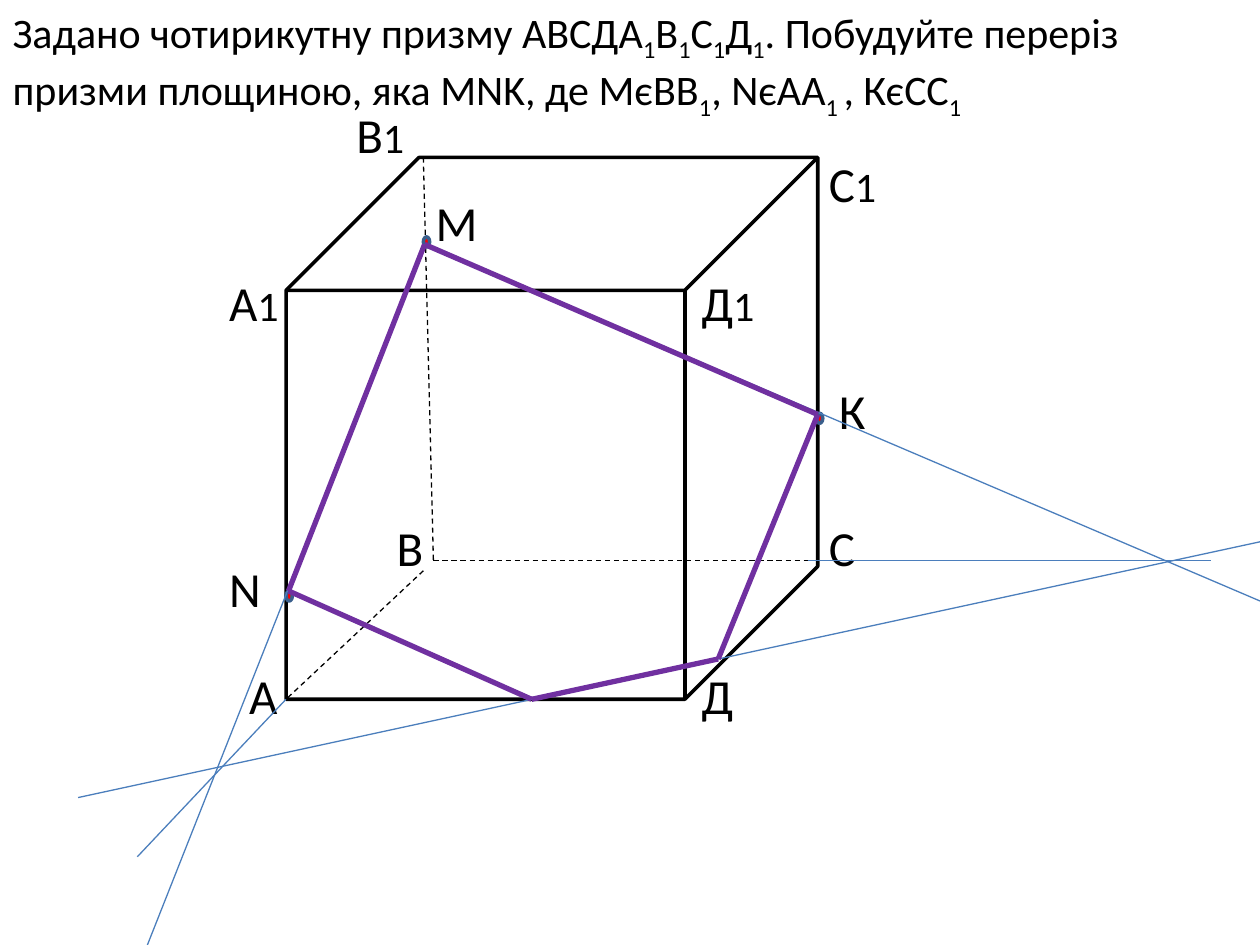
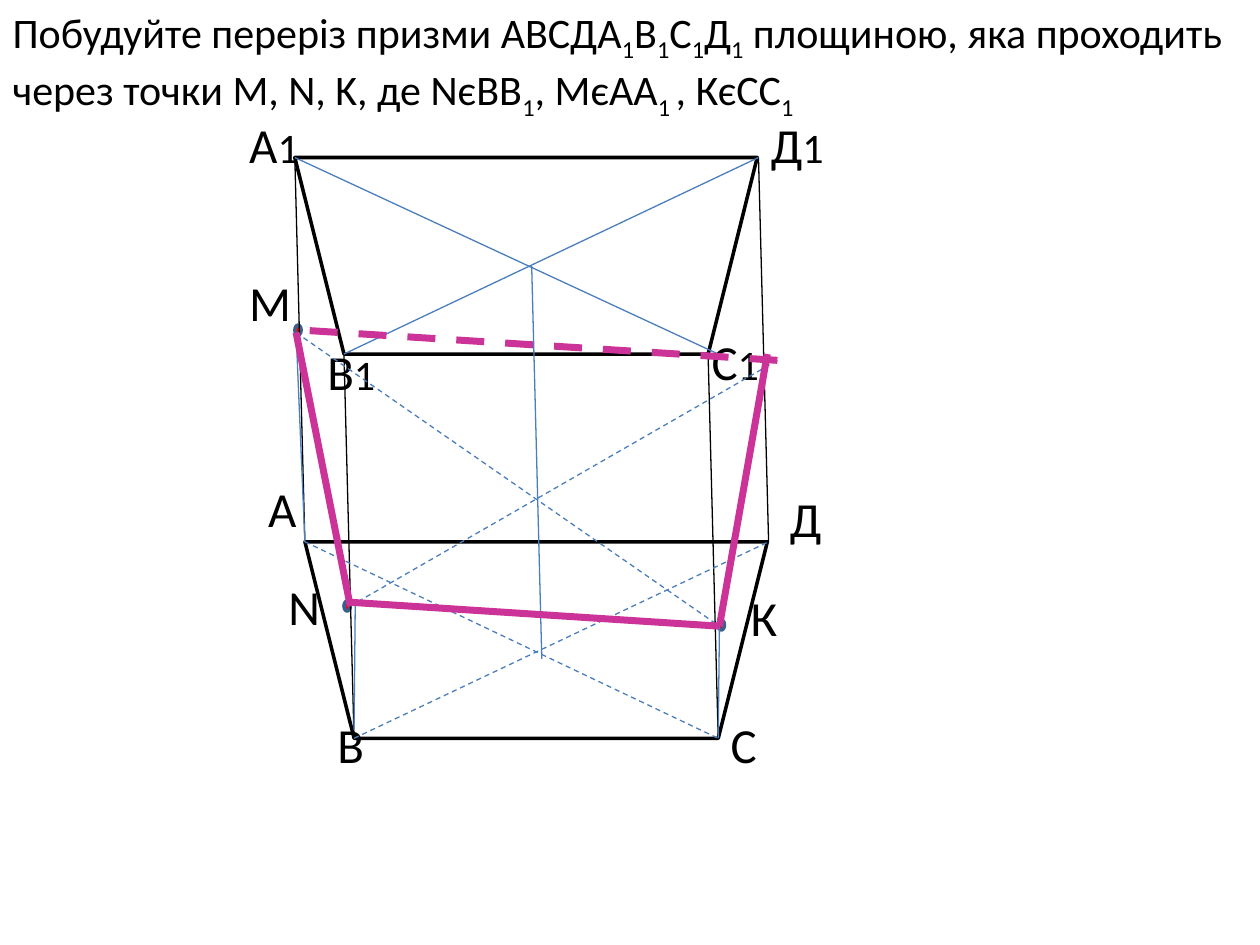
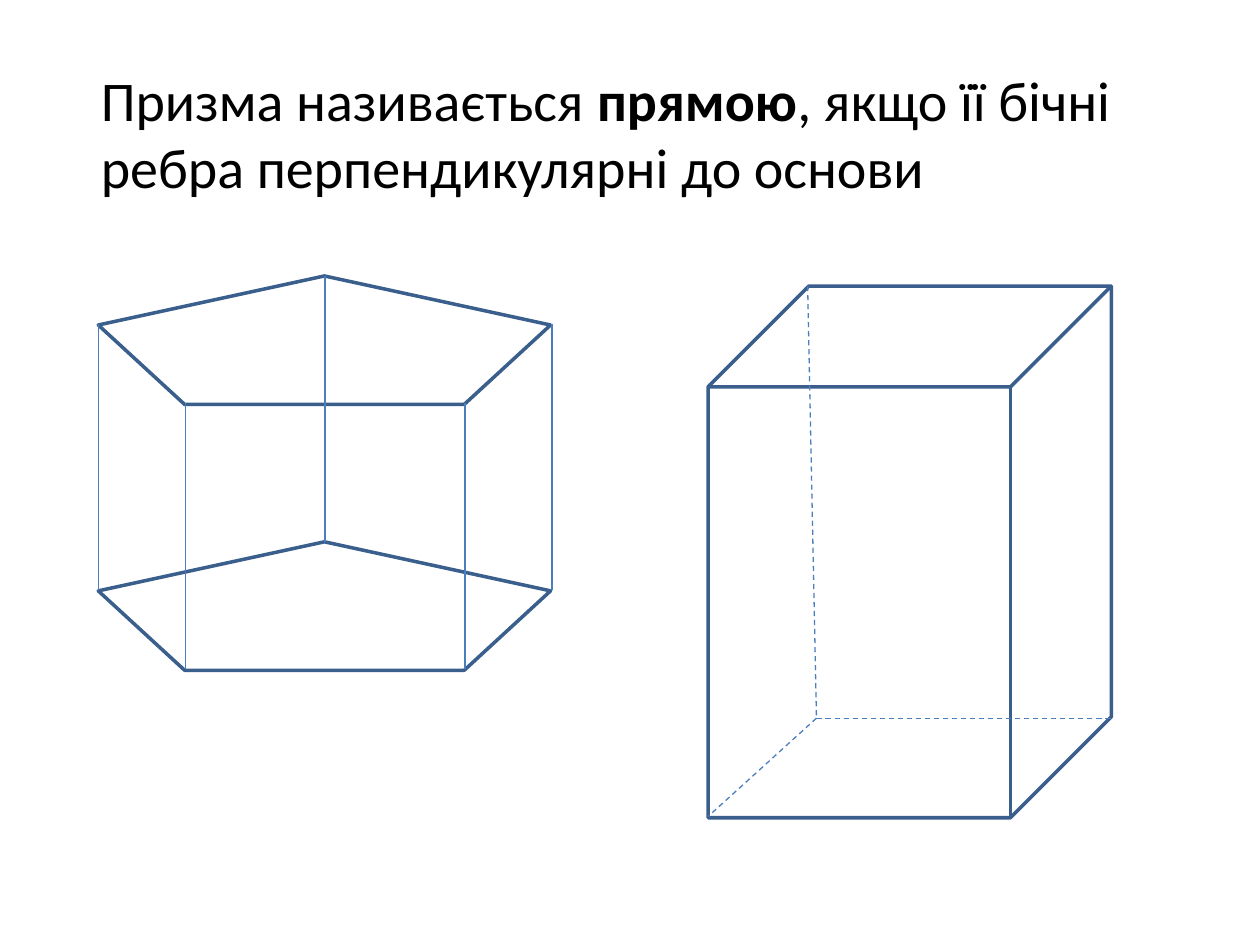
from dataclasses import dataclass

from lxml import etree
from pptx import Presentation
from pptx.dml.color import RGBColor
from pptx.enum.dml import MSO_LINE
from pptx.enum.shapes import MSO_CONNECTOR, MSO_SHAPE
from pptx.enum.text import MSO_ANCHOR, MSO_AUTO_SIZE, PP_ALIGN
from pptx.oxml.ns import qn
from pptx.util import Inches, Pt

CUBE = MSO_SHAPE.CUBE
OVAL = MSO_SHAPE.OVAL
PENTAGON = MSO_SHAPE.REGULAR_PENTAGON
TRAPEZOID = MSO_SHAPE.TRAPEZOID
STRAIGHT = MSO_CONNECTOR.STRAIGHT
DASH = MSO_LINE.DASH
TOP = MSO_ANCHOR.TOP
LEFT = PP_ALIGN.LEFT
FIT = MSO_AUTO_SIZE.SHAPE_TO_FIT_TEXT


@dataclass(frozen=True)
class Theme:
    font: str = "Calibri"
    black: str = "000000"
    outline: str = "3A5F8C"
    blue: str = "4B7EBC"
    red: str = "FF0000"
    purple: str = "7030A0"
    pink: str = "CC3399"
    task_size: int = 24
    heading_size: int = 32
    label_size: int = 28
    index_size: int = 24
    thin: float = 0.75
    edge: float = 2
    section: float = 3
    thick_section: float = 4


class Deck:
    def __init__(self, theme):
        self.theme = theme
        self.prs = Presentation()
        self.prs.slide_width = Inches(10)
        self.prs.slide_height = Inches(7.5)
        self.s = None

    def add_slide(self):
        self.s = self.prs.slides.add_slide(self.prs.slide_layouts[5])

    def text(self, sp, size):
        tf = sp.text_frame
        tf.word_wrap = True
        tf.auto_size = FIT
        tf.vertical_anchor = TOP
        p = tf.paragraphs[0]
        p.alignment = LEFT
        p.font.name = self.theme.font
        p.font.size = Pt(size)
        p.font.color.rgb = RGBColor.from_string(self.theme.black)
        return p

    def title(self, text, box, size, bold=False):
        sp = self.s.shapes.title
        sp.left, sp.top, sp.width, sp.height = map(Inches, box)
        p = self.text(sp, size)
        for i, part in enumerate(text.split("_")):
            if not part:
                continue
            r = p.add_run()
            r.text = part
            if i % 2 and bold:
                r.font.bold = True
            elif i % 2:
                r._r.get_or_add_rPr().set("baseline", "-25000")

    def task(self, text):
        self.title(text, (0, 0, 10, 0.91), self.theme.task_size)

    def label(self, name, x, y):
        width = 0.47 if len(name) == 1 else 0.63
        sp = self.s.shapes.add_textbox(Inches(x), Inches(y), Inches(width), Inches(0.57))
        p = self.text(sp, self.theme.label_size)
        for char in name:
            r = p.add_run()
            r.text = char
            if char.isdigit():
                r.font.size = Pt(self.theme.index_size)

    def labels(self, places):
        for name, (x, y) in places.items():
            self.label(name, x, y)

    def solid(self, kind, box, color, fill=None, rotation=0):
        sp = self.s.shapes.add_shape(kind, *map(Inches, box))
        sp.shadow.inherit = False
        sp.rotation = rotation
        if fill:
            sp.fill.solid()
            sp.fill.fore_color.rgb = RGBColor.from_string(fill)
        else:
            sp.fill.background()
        sp.line.color.rgb = RGBColor.from_string(color)
        sp.line.width = Pt(self.theme.edge)

    def dots(self, *corners):
        for x, y in corners:
            self.solid(OVAL, (x, y, 0.05, 0.08), self.theme.outline, self.theme.red)

    def line(self, start, end, color, width=None, dashed=False):
        sp = self.s.shapes.add_connector(STRAIGHT, *map(Inches, (*start, *end)))
        sp.line.color.rgb = RGBColor.from_string(color)
        sp.line.width = Pt(width or self.theme.thin)
        if dashed:
            sp.line.dash_style = DASH
        etree.SubElement(sp._element.spPr, qn("a:effectLst"))

    def lines(self, pairs, color, width=None, dashed=False):
        for start, end in pairs:
            self.line(start, end, color, width, dashed)


def build_cube_section(deck):
    t = deck.theme
    deck.add_slide()
    deck.task("Задано чотирикутну призму АВСДА_1_В_1_С_1_Д_1_. Побудуйте переріз "
              "призми площиною, яка MNK, де МєВВ_1_, NєАА_1 _, КєСС_1_")
    deck.solid(CUBE, (2.27, 1.25, 4.22, 4.3), t.black)
    a, b = (2.27, 5.55), (3.44, 4.45)
    deck.lines([((3.36, 1.25), b), (b, (6.41, 4.45)), ((3.36, 4.53), a)],
               t.black, dashed=True)
    deck.labels({
        "А": (1.88, 5.23), "В": (3.05, 4.06), "С": (6.48, 4.06), "Д": (5.47, 5.23),
        "А1": (1.72, 2.11), "В1": (2.73, 0.78), "С1": (6.48, 1.17), "Д1": (5.47, 2.11),
        "М": (3.36, 1.48), "N": (1.72, 4.38), "К": (6.56, 2.97),
    })
    deck.dots((3.36, 1.88), (2.27, 4.69), (6.48, 3.28))
    m, k, n = (3.37, 1.94), (6.49, 3.29), (2.29, 4.69)
    on_cd, on_ad = (5.7, 5.23), (4.22, 5.55)
    deck.lines([(m, (1.17, 7.5)), (m, (10, 4.77)), (a, (1.09, 6.8)),
                ((6.41, 4.45), (9.61, 4.45)), ((0.62, 6.33), (10, 4.3))], t.blue)
    section = [m, k, on_cd, on_ad, n]
    deck.lines(zip(section, section[1:] + section[:1]), t.purple, t.section)


def build_trapezoid_section(deck):
    t = deck.theme
    deck.add_slide()
    deck.task("Побудуйте переріз призми АВСДА_1_В_1_С_1_Д_1_ площиною, яка проходить "
              "через точки M, N, K, де NєВВ_1_, МєАА_1 _, КєСС_1_")
    deck.labels({
        "А": (2.03, 3.75), "В": (2.58, 5.62), "С": (5.7, 5.62), "Д": (6.17, 3.83),
        "А1": (1.88, 0.86), "В1": (2.5, 2.66), "С1": (5.55, 2.58), "Д1": (6.02, 0.86),
        "М": (1.88, 2.11), "N": (2.19, 4.53), "К": (5.86, 4.61),
    })
    deck.dots((2.34, 2.58), (2.73, 4.77), (5.7, 4.92))
    for x, y in ((2.34, 1.25), (2.42, 4.3)):
        deck.solid(TRAPEZOID, (x, y, 3.67, 1.56), t.black, rotation=180)
    upper = [(2.34, 1.25), (2.73, 2.81), (5.62, 2.81), (6.02, 1.25)]
    lower = [(x + 0.08, y + 3.05) for x, y in upper]
    deck.lines(zip(upper, lower), t.black)
    a1, b1, _, d1 = upper
    a, b, c, d = lower
    m, n, k, l = (2.35, 2.64), (2.78, 4.81), (5.71, 4.97), (6.17, 2.86)
    deck.lines([((2.82, 4.77), (2.81, 5.79)), (m, a), (k, c),
                (a1, (5.7, 2.81)), (b1, d1), ((4.3, 5.23), (4.22, 2.11))], t.blue)
    deck.lines([(a, c), (b, d), (m, k), (n, l)], t.blue, dashed=True)
    deck.line(l, (2.39, 2.62), t.pink, t.thick_section, dashed=True)
    deck.lines([(m, n), ((2.78, 4.78), k), (k, (6.09, 2.81))], t.pink, t.thick_section)


def build_right_prisms(deck):
    t = deck.theme
    deck.add_slide()
    deck.title("Призма називається _прямою_, якщо її бічні ребра перпендикулярні до основи",
               (0.7, 0.47, 8.36, 1.18), t.heading_size, bold=True)
    deck.solid(CUBE, (5.62, 2.27, 3.2, 4.22), t.outline)
    hidden = (6.48, 5.7)
    deck.lines([((6.41, 2.27), hidden), (hidden, (8.83, 5.7)), (hidden, (5.62, 6.48))],
               t.blue, dashed=True)
    height = 2.11
    for y in (2.19, 2.19 + height):
        deck.solid(PENTAGON, (0.78, y, 3.59, 1.02), t.outline)
    for x, y in ((0.78, 2.57), (1.47, 3.2), (2.58, 2.19), (3.69, 3.2), (4.38, 2.57)):
        deck.line((x, y), (x, y + height), t.blue)


def main():
    deck = Deck(Theme())
    build_cube_section(deck)
    build_trapezoid_section(deck)
    build_right_prisms(deck)
    deck.prs.save("out.pptx")


if __name__ == "__main__":
    main()
